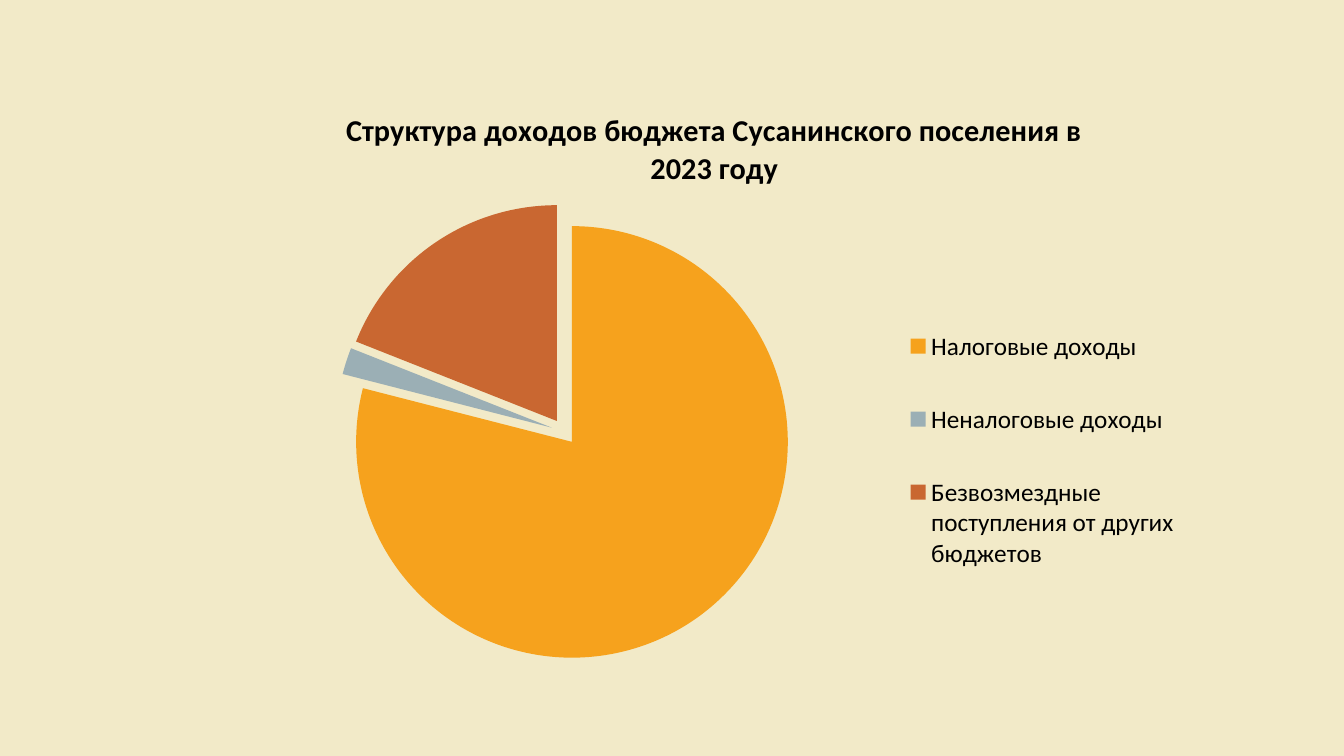
from dataclasses import dataclass

from lxml import etree
from pptx import Presentation
from pptx import util as u
from pptx.chart.data import CategoryChartData
from pptx.dml.color import RGBColor
from pptx.enum import chart as charts
from pptx.oxml import ns

SLIDE_WIDTH, SLIDE_HEIGHT = u.Inches(13.33), u.Inches(7.5)
COLOURS = {
    "background": "F2EAC8",
    "text": "000000",
    "tax": "F6A21D",
    "non_tax": "9BAFB5",
    "transfers": "C96731",
}
FONT = "Calibri"
TITLE = "Структура доходов бюджета Сусанинского поселения в 2023 году"
EXPLOSION = 6


@dataclass(frozen=True)
class Income:
    label: str
    share: int
    colour: str


@dataclass(frozen=True)
class Area:
    x: float
    y: float
    w: float | None = None
    h: float | None = None


INCOMES = [
    Income("Налоговые доходы", 79, "tax"),
    Income("Неналоговые доходы", 2, "non_tax"),
    Income("Безвозмездные поступления от других бюджетов", 19, "transfers"),
]
CHART_AREA = Area(0.167, 0.105, 0.72, 0.79)
TITLE_AREA = Area(0.12, 0.04)
PIE_AREA = Area(0.114, 0.207, 0.474, 0.766)
LEGEND_AREA = Area(0.7, 0.35, 0.29, 0.54)


def colour(name: str) -> RGBColor:
    return RGBColor.from_string(COLOURS[name])


def format_font(font, *, size: float, bold: bool = False) -> None:
    font.name = FONT
    font.size = u.Pt(size)
    font.bold = bold
    font.color.rgb = colour("text")


def write_text(frame, content: str, *, size: float, bold: bool = False) -> None:
    span = frame.paragraphs[0].add_run()
    span.text = content
    format_font(span.font, size=size, bold=bold)


def add_node(parent, tag: str, value: str | None = None):
    node = etree.SubElement(parent, ns.qn(tag))
    if value is not None:
        node.set("val", value)
    return node


def place(element, area: Area, index: int, inner: bool = False) -> None:
    for old in element.findall(ns.qn("c:layout")):
        element.remove(old)
    layout = etree.Element(ns.qn("c:layout"))
    manual = add_node(layout, "c:manualLayout")
    if inner:
        add_node(manual, "c:layoutTarget", "inner")
    add_node(manual, "c:xMode", "edge")
    add_node(manual, "c:yMode", "edge")
    for side in ("x", "y", "w", "h"):
        share = getattr(area, side)
        if share is not None:
            add_node(manual, f"c:{side}", str(share))
    element.insert(index, layout)


def add_income_pie(page) -> None:
    data = CategoryChartData()
    data.categories = [income.label for income in INCOMES]
    data.add_series("Series 1", [income.share for income in INCOMES])
    pie = page.shapes.add_chart(
        charts.XL_CHART_TYPE.PIE,
        int(SLIDE_WIDTH * CHART_AREA.x),
        int(SLIDE_HEIGHT * CHART_AREA.y),
        int(SLIDE_WIDTH * CHART_AREA.w),
        int(SLIDE_HEIGHT * CHART_AREA.h),
        data,
    ).chart
    format_font(pie.font, size=18)

    pie.has_title = True
    write_text(pie.chart_title.text_frame, TITLE, size=21.6, bold=True)
    pie.chart_title.include_in_layout = False
    place(pie.chart_title._element, TITLE_AREA, 1)

    pie.has_legend = True
    pie.legend.position = charts.XL_LEGEND_POSITION.RIGHT
    pie.legend.include_in_layout = False
    format_font(pie.legend.font, size=18)
    place(pie.legend._element, LEGEND_AREA, 1)

    place(pie._chartSpace.chart.plotArea, PIE_AREA, 0, inner=True)
    plot = pie.plots[0]
    plot.vary_by_categories = True
    series = plot.series[0]
    for index, income in enumerate(INCOMES):
        slice_format = series.points[index].format
        slice_format.fill.solid()
        slice_format.fill.fore_color.rgb = colour(income.colour)
        slice_format.line.fill.background()
    explosion = etree.Element(ns.qn("c:explosion"), val=str(EXPLOSION))
    series._element.find(ns.qn("c:dPt")).addprevious(explosion)
    for point in series._element.findall(ns.qn("c:dPt")):
        slice_explosion = etree.Element(ns.qn("c:explosion"), val=str(EXPLOSION))
        point.find(ns.qn("c:spPr")).addprevious(slice_explosion)


def main() -> None:
    deck = Presentation()
    deck.slide_width, deck.slide_height = SLIDE_WIDTH, SLIDE_HEIGHT
    page = deck.slides.add_slide(deck.slide_layouts[6])
    page.background.fill.solid()
    page.background.fill.fore_color.rgb = colour("background")
    add_income_pie(page)
    deck.save("out.pptx")


if __name__ == "__main__":
    main()
